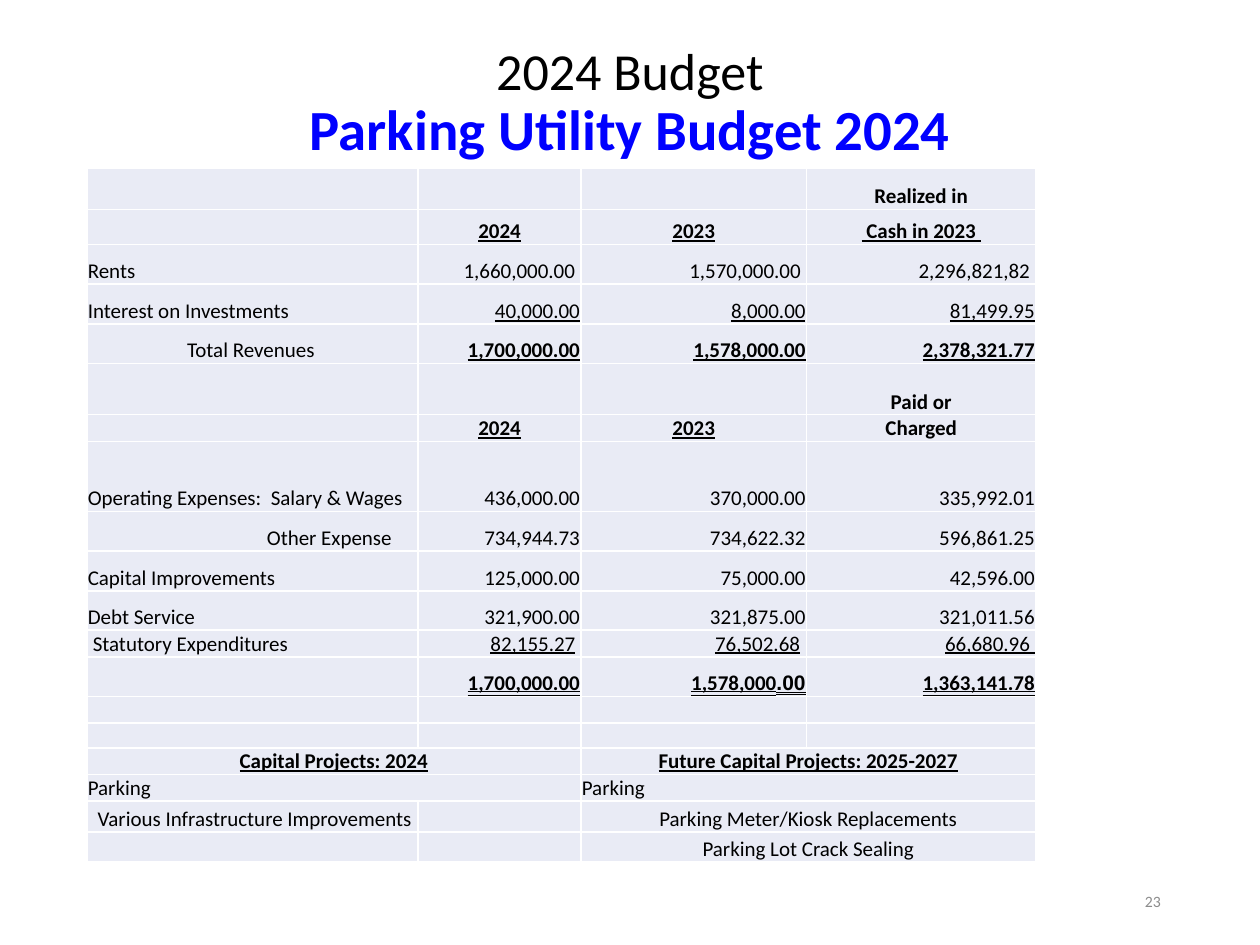
import pptx
import pptx.dml.color
import pptx.enum.text
import pptx.oxml
import pptx.oxml.ns
import pptx.util
from lxml import etree

Cm, Pt = pptx.util.Cm, pptx.util.Pt
ALIGN = pptx.enum.text.PP_ALIGN
ANCHOR = pptx.enum.text.MSO_ANCHOR
DOUBLE = pptx.enum.text.MSO_UNDERLINE.DOUBLE_LINE
COLORS = {"ink": "000000", "heading": "0000FF", "cell": "E9EBF5",
          "border": "FFFFFF", "number": "8C8C8C"}
qn = pptx.oxml.ns.qn

# Column widths and, per row: height, formats of label and figures, texts
COLUMNS = [6.68, 3.28, 4.55, 4.62]
LABEL = {"align": ALIGN.LEFT}
AMOUNT = {"align": ALIGN.RIGHT}
LINED = {**AMOUNT, "underline": True}
TOTAL = {**LINED, "bold": True}
GRAND = {**TOTAL, "underline": DOUBLE}
HEAD = {"align": ALIGN.CENTER, "bold": True}
YEAR = {**HEAD, "underline": True}
PROJECT = {"align": ALIGN.CENTER}
ROWS = [
    (0.83, LABEL, HEAD, ["", "", "", "Realized in"]),
    (0.71, LABEL, YEAR, ["", "2024", "2023", " Cash in 2023 "]),
    (0.8, LABEL, AMOUNT, ["Rents", "1,660,000.00 ", "1,570,000.00 ", "2,296,821,82 "]),
    (0.8, LABEL, LINED, ["Interest on Investments", "40,000.00", "8,000.00", "81,499.95"]),
    (0.8, {**LABEL, "indent": 2}, TOTAL,
     ["Total Revenues", "1,700,000.00", "1,578,000.00", "2,378,321.77"]),
    (1.03, LABEL, HEAD, ["", "", "", "Paid or"]),
    (0.54, LABEL, YEAR, ["", "2024", "2023", ("Charged", HEAD)]),
    (1.41, LABEL, AMOUNT, ["Operating Expenses:  Salary & Wages",
                           "436,000.00", "370,000.00", "335,992.01"]),
    (0.8, {**LABEL, "indent": 3.61}, AMOUNT,
     ["Other Expense", "734,944.73", "734,622.32", "596,861.25"]),
    (0.8, LABEL, AMOUNT, ["Capital Improvements", "125,000.00", "75,000.00", "42,596.00"]),
    (0.79, LABEL, AMOUNT, ["Debt Service", "321,900.00", "321,875.00", "321,011.56"]),
    (0.54, {**LABEL, "indent": 0.1}, LINED,
     ["Statutory Expenditures",
      ("\t82,155.27", {"underline": True, "tab": 3.15}),
      ("\t76,502.68", {"underline": True, "tab": 4.4}), "66,680.96\u00a0"]),
    (0.8, LABEL, GRAND,
     ["", "1,700,000.00", [("1,578,000", {}), (".00", {"font": "Arial"})], "1,363,141.78"]),
    (0.53, LABEL, LABEL, ["", "", "", ""]),
    (0.51, LABEL, LABEL, ["", "", "", ""]),
    (0.53, YEAR, YEAR, ["Capital Projects: 2024", None,
                        "Future Capital Projects: 2025-2027", None]),
    (0.54, LABEL, LABEL, ["Parking", None, "Parking", None]),
    (0.62, {**LABEL, "indent": 0.2}, PROJECT,
     ["Various Infrastructure Improvements", "", "Parking Meter/Kiosk Replacements", None]),
    (0.61, LABEL, PROJECT, ["", "", "Parking Lot Crack Sealing", None]),
]


def color(name):
    return pptx.dml.color.RGBColor.from_string(COLORS[name])


def write_text(paragraph, text, align=ALIGN.LEFT, indent=0, tab=None, **base):
    """Write a string, or a list of (string, format) runs, into a paragraph."""
    paragraph.alignment = align
    properties = paragraph._p.get_or_add_pPr()
    if indent:
        properties.set("marL", str(Cm(indent)))
    if tab:
        stops = etree.SubElement(properties, qn("a:tabLst"))
        etree.SubElement(stops, qn("a:tab"), pos=str(Cm(tab)), algn="r")
    for piece, changes in ([(text, {})] if isinstance(text, str) else text):
        look = {**base, **changes}
        run = paragraph.add_run()
        run.text = piece
        run.font.name = look.get("font", "Calibri")
        run.font.size = Pt(look.get("size", 12))
        run.font.bold = look.get("bold", False)
        run.font.underline = look.get("underline", False)
        run.font.color.rgb = color(look.get("color", "ink"))


def add_frame(slide, left, top, width, height):
    frame = slide.shapes.add_textbox(Cm(left), Cm(top), Cm(width), Cm(height)).text_frame
    frame.word_wrap = True
    frame.vertical_anchor = ANCHOR.MIDDLE
    return frame


def add_title(slide, left, top, width, height):
    frame = add_frame(slide, left, top, width, height)
    year, name = frame.paragraphs[0], frame.add_paragraph()
    write_text(year, "2024 Budget", align=ALIGN.CENTER, size=29.7)
    write_text(name, "Parking Utility Budget 2024", align=ALIGN.CENTER,
               size=32.4, bold=True, color="heading")
    year.line_spacing = name.line_spacing = 0.9


def style_cell(cell):
    cell.fill.solid()
    cell.fill.fore_color.rgb = color("cell")
    cell.vertical_anchor = ANCHOR.BOTTOM
    cell.margin_left = cell.margin_right = cell.margin_top = Cm(0.02)
    cell.margin_bottom = 0
    properties = cell._tc.get_or_add_tcPr()
    for place, side in enumerate(("lnL", "lnR", "lnT", "lnB")):
        line = etree.Element(qn("a:" + side), w=str(Pt(1)))
        fill = etree.SubElement(line, qn("a:solidFill"))
        etree.SubElement(fill, qn("a:srgbClr"), val=COLORS["border"])
        properties.insert(place, line)


def add_budget_table(slide, left, top):
    heights = [row[0] for row in ROWS]
    table = slide.shapes.add_table(len(ROWS), len(COLUMNS), Cm(left), Cm(top),
                                   Cm(sum(COLUMNS)), Cm(sum(heights))).table
    table.first_row = table.horz_banding = False
    for column, width in zip(table.columns, COLUMNS):
        column.width = Cm(width)
    for r, (height, label_format, figure_format, texts) in enumerate(ROWS):
        table.rows[r].height = Cm(height)
        for c, text in enumerate(texts):
            cell = table.cell(r, c)
            style_cell(cell)
            look = figure_format if c else label_format
            if isinstance(text, tuple):
                text, look = text
            paragraph = cell.text_frame.paragraphs[0]
            if text:
                write_text(paragraph, text, **look)
            else:
                # Small end mark keeps empty rows low
                etree.SubElement(paragraph._p, qn("a:endParaRPr"), sz="1000")
            if text is None:
                table.cell(r, c - 1).merge(cell)


def add_page_number(slide, left, top, width, height):
    frame = add_frame(slide, left, top, width, height)
    write_text(frame.paragraphs[0], "23", align=ALIGN.RIGHT, size=9, color="number")


def main():
    deck = pptx.Presentation()
    deck.slide_width, deck.slide_height = Cm(25.4), Cm(19.05)
    slide = deck.slides.add_slide(deck.slide_layouts[6])
    add_title(slide, 1.75, 1.02, 21.9, 2.16)
    add_budget_table(slide, 1.75, 3.39)
    add_page_number(slide, 17.93, 17.65, 5.72, 1.02)
    deck.save("out.pptx")


if __name__ == "__main__":
    main()
